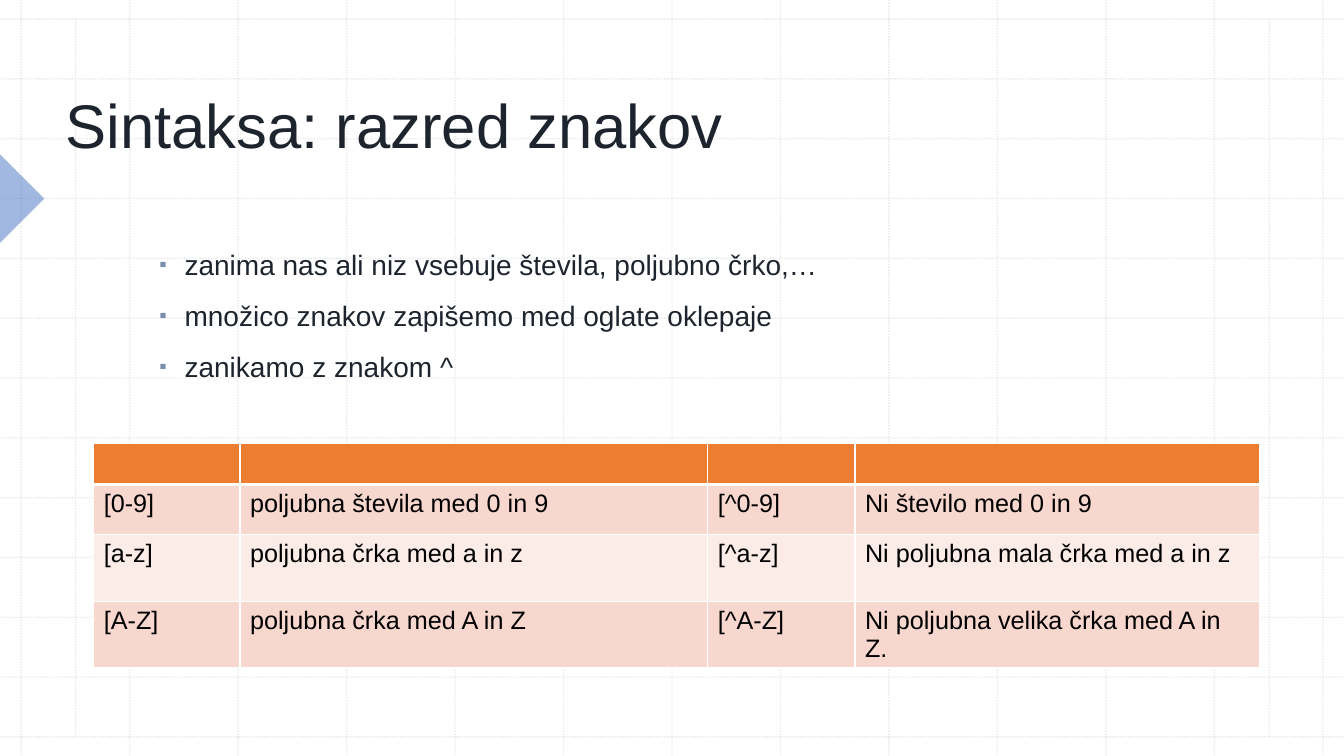
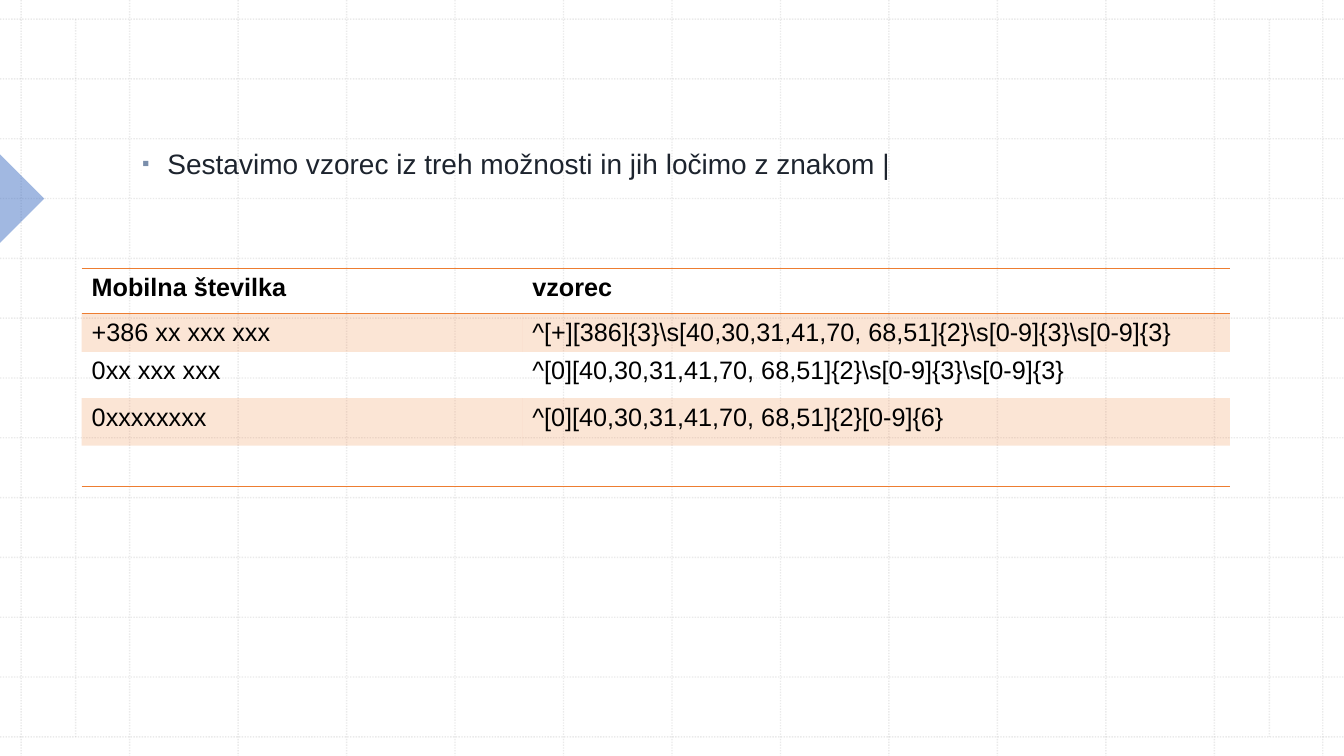
from lxml.etree import SubElement
from pptx import Presentation
from pptx.dml.color import RGBColor
from pptx.enum.dml import MSO_LINE
from pptx.enum.shapes import MSO_CONNECTOR, MSO_SHAPE
from pptx.enum.text import MSO_ANCHOR, MSO_AUTO_SIZE, PP_ALIGN
from pptx.oxml.ns import qn
from pptx.util import Inches, Pt

COLORS = {
    "background": "FFFFFF",
    "grid": "BCBCBC",
    "marker": "4472C4",
    "heading": "1D242E",
    "bullet": "7A8EAB",
    "cell_text": "000000",
    "white": "FFFFFF",
    "orange": "ED7D31",
    "band_dark": "F8D7CE",
    "band_light": "FCECE8",
}
FONT = "Arial"
WIDTH, HEIGHT = 13.33, 7.5
GRID_STEPS = 12
GRID_LEFT, GRID_RIGHT = 0.21, 13.12
GRID_TOP, GRID_BOTTOM = 0.19, 7.31
INNER_COLUMNS = (0.75, 12.59)
PLAIN_TABLE = "{2D5ABB26-0587-4C30-8999-92F81FD0307C}"


def color(name):
    return RGBColor.from_string(COLORS[name])


def set_alpha(element, percent):
    for srgb in element.iter(qn("a:srgbClr")):
        SubElement(srgb, qn("a:alpha"), val=str(percent * 1000))


def evenly(first, last):
    return [first + (last - first) * i / GRID_STEPS for i in range(GRID_STEPS + 1)]


class Deck:
    def __init__(self):
        self.presentation = Presentation()
        self.presentation.slide_width = Inches(WIDTH)
        self.presentation.slide_height = Inches(HEIGHT)
        self.layout = self.presentation.slide_layouts[1]
        self.slide = None

    def new_slide(self):
        self.slide = self.presentation.slides.add_slide(self.layout)
        if len(self.presentation.slides) == 1:
            self.backdrop()

    def backdrop(self):
        fill = self.layout.background.fill
        fill.solid()
        fill.fore_color.rgb = color("background")
        parts = [self.grid_line(0, y, WIDTH, y) for y in evenly(GRID_TOP, GRID_BOTTOM)]
        parts += [self.grid_line(x, 0, x, HEIGHT) for x in evenly(GRID_LEFT, GRID_RIGHT)]
        parts += [self.grid_line(x, GRID_TOP, x, GRID_BOTTOM) for x in INNER_COLUMNS]
        parts.append(self.marker())
        for number, part in enumerate(parts, 100):
            part.element.xpath(".//p:cNvPr")[0].set("id", str(number))
            self.layout.shapes.element.append(part.element)

    def grid_line(self, x1, y1, x2, y2):
        rule = self.slide.shapes.add_connector(
            MSO_CONNECTOR.STRAIGHT, Inches(x1), Inches(y1), Inches(x2), Inches(y2))
        rule.line.color.rgb = color("grid")
        rule.line.width = Pt(1)
        rule.line.dash_style = MSO_LINE.ROUND_DOT
        properties = rule.element.spPr
        set_alpha(properties, 30)
        SubElement(properties, qn("a:effectLst"))
        return rule

    def marker(self):
        triangle = self.slide.shapes.add_shape(
            MSO_SHAPE.RIGHT_TRIANGLE, Inches(-0.31), Inches(1.66), Inches(0.62), Inches(0.62))
        triangle.rotation = 225
        triangle.shadow.inherit = False
        triangle.fill.solid()
        triangle.fill.fore_color.rgb = color("marker")
        triangle.line.fill.background()
        set_alpha(triangle.element.spPr, 50)
        return triangle

    def place(self, holder, left, top, width, height):
        holder.left, holder.top = Inches(left), Inches(top)
        holder.width, holder.height = Inches(width), Inches(height)
        holder.text_frame.word_wrap = True
        holder.text_frame.auto_size = MSO_AUTO_SIZE.NONE

    def style_text(self, paragraph, size, color_name, bold=False):
        paragraph.alignment = PP_ALIGN.LEFT
        for run in paragraph.runs:
            run.font.name = FONT
            run.font.size = Pt(size)
            run.font.bold = bold
            run.font.color.rgb = color(color_name)

    def title(self, heading):
        holder = self.slide.shapes.title
        self.place(holder, 0.55, 0.79, 11.29, 0.86)
        holder.text_frame.text = heading
        holder.text_frame.vertical_anchor = MSO_ANCHOR.BOTTOM
        self.style_text(holder.text_frame.paragraphs[0], 44, "heading")

    def no_title(self):
        holder = self.slide.shapes.title.element
        holder.getparent().remove(holder)

    def bullets(self, left, top, points):
        holder = self.slide.placeholders[1]
        self.place(holder, left, top, 11.29, 3.9)
        holder.text_frame.text = "\n".join(points)
        holder.text_frame.vertical_anchor = MSO_ANCHOR.TOP
        for paragraph in holder.text_frame.paragraphs:
            self.style_text(paragraph, 20, "heading")
            paragraph.line_spacing = 1.1
            paragraph.space_before = Pt(10)
            properties = paragraph._p.get_or_add_pPr()
            properties.set("marL", str(Inches(0.25)))
            properties.set("indent", str(Inches(-0.25)))
            tint = SubElement(properties, qn("a:buClr"))
            SubElement(tint, qn("a:srgbClr"), val=COLORS["bullet"])
            SubElement(properties, qn("a:buSzPct"), val="75000")
            SubElement(properties, qn("a:buFont"), typeface=FONT)
            SubElement(properties, qn("a:buChar"), char="▪")

    def table(self, left, top, widths, heights, rows, bold_header=False):
        table = self.slide.shapes.add_table(
            len(rows), len(widths), Inches(left), Inches(top),
            Inches(sum(widths)), Inches(sum(heights))).table
        table._tbl.tblPr.find(qn("a:tableStyleId")).text = PLAIN_TABLE
        for column, width in zip(table.columns, widths):
            column.width = Inches(width)
        for r, (row, height, values) in enumerate(zip(table.rows, heights, rows)):
            row.height = Inches(height)
            for cell, value in zip(row.cells, values):
                cell.text_frame.text = value
                self.style_text(cell.text_frame.paragraphs[0], 18, "cell_text",
                                bold_header and r == 0)
        return table

    def cell_fill(self, cell, color_name, alpha=None):
        if color_name is None:
            cell.fill.background()
            return
        cell.fill.solid()
        cell.fill.fore_color.rgb = color(color_name)
        if alpha:
            set_alpha(cell._tc.tcPr, alpha)

    def borders(self, cell, color_name, **widths):
        properties = cell._tc.get_or_add_tcPr()
        sides = [side for side in "LRTB" if side in widths]
        for position, side in enumerate(sides):
            edge = SubElement(properties, qn("a:ln" + side), w=str(Pt(widths[side])))
            solid = SubElement(edge, qn("a:solidFill"))
            SubElement(solid, qn("a:srgbClr"), val=COLORS[color_name])
            properties.insert(position, edge)

    def banded_table(self, left, top, widths, heights, rows):
        table = self.table(left, top, widths, heights, rows)
        for r, row in enumerate(table.rows):
            band = "orange" if r == 0 else "band_dark" if r % 2 else "band_light"
            for cell in row.cells:
                self.cell_fill(cell, band)
                self.borders(cell, "white", L=1, R=1,
                             T=3 if r == 1 else 1, B=3 if r == 0 else 1)

    def ruled_table(self, left, top, widths, heights, rows):
        table = self.table(left, top, widths, heights, rows, bold_header=True)
        rules = {0: {"T": 1, "B": 1}, len(rows) - 1: {"B": 1}}
        for r, row in enumerate(table.rows):
            for cell in row.cells:
                self.cell_fill(cell, "orange" if r % 2 else None, 20)
                self.borders(cell, "orange", **rules.get(r, {}))


def main():
    deck = Deck()

    deck.new_slide()
    deck.title("Sintaksa: razred znakov")
    deck.banded_table(0.93, 4.4, [1.45, 4.64, 1.46, 4.01], [0.37, 0.5, 0.66, 0.66], [
        ["", "", "", ""],
        ["[0-9]", "poljubna števila med 0 in 9", "[^0-9]", "Ni število med 0 in 9"],
        ["[a-z]", "poljubna črka med a in z", "[^a-z]", "Ni poljubna mala črka med a in z"],
        ["[A-Z]", "poljubna črka med A in Z", "[^A-Z]", "Ni poljubna velika črka med A in Z."],
    ])
    deck.bullets(1.48, 2.37, [
        "zanima nas ali niz vsebuje števila, poljubno črko,…",
        "množico znakov zapišemo med oglate oklepaje",
        "zanikamo z znakom ^",
    ])

    deck.new_slide()
    deck.no_title()
    deck.bullets(1.31, 1.37, ["Sestavimo vzorec iz treh možnosti in jih ločimo z znakom |"])
    deck.ruled_table(0.81, 2.66, [4.37, 7.02], [0.45, 0.38, 0.46, 0.47, 0.38], [
        ["Mobilna številka", "vzorec"],
        ["+386 xx xxx xxx", r"^[+][386]{3}\s[40,30,31,41,70, 68,51]{2}\s[0-9]{3}\s[0-9]{3}"],
        ["0xx xxx xxx", r"^[0][40,30,31,41,70, 68,51]{2}\s[0-9]{3}\s[0-9]{3}"],
        ["0xxxxxxxx", "^[0][40,30,31,41,70, 68,51]{2}[0-9]{6}"],
        ["", ""],
    ])

    deck.presentation.save("out.pptx")


if __name__ == "__main__":
    main()
